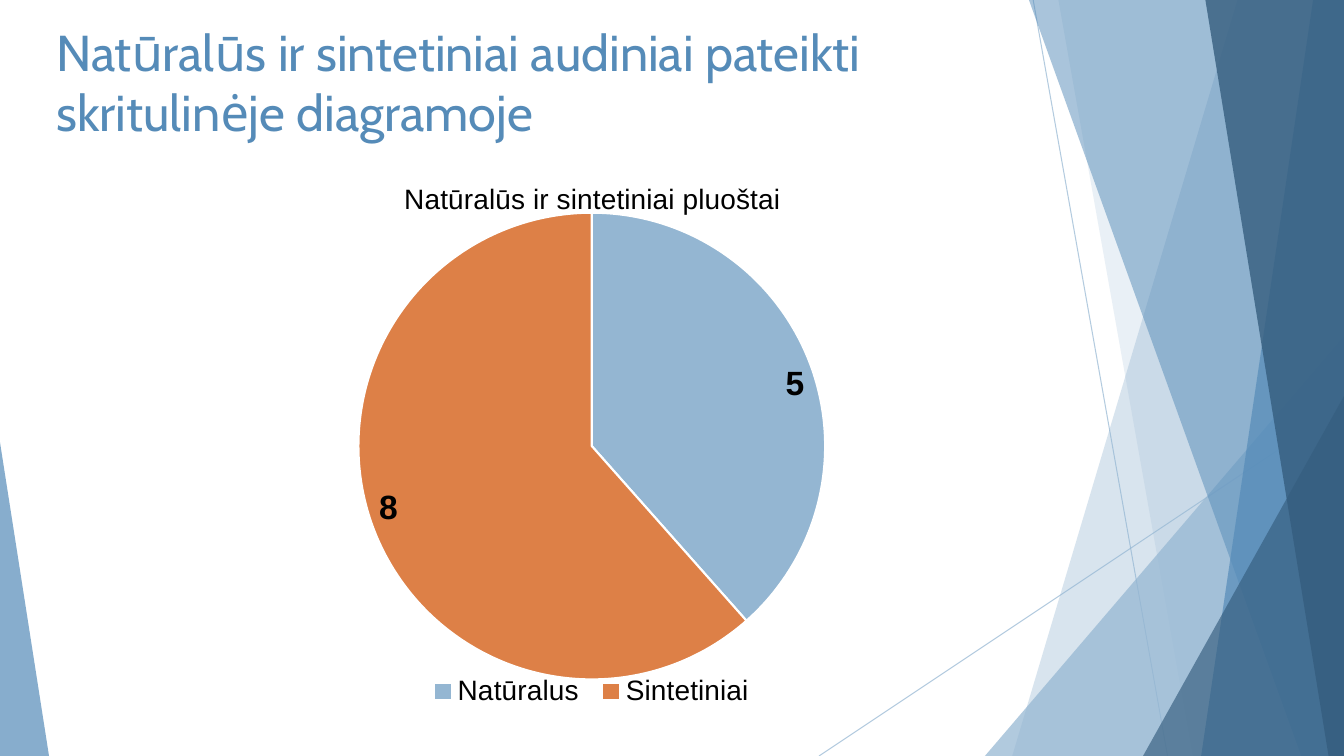
from lxml.etree import SubElement
from pptx import Presentation
from pptx.chart.data import CategoryChartData
from pptx.dml.color import RGBColor
from pptx.enum.chart import XL_CHART_TYPE, XL_LABEL_POSITION, XL_LEGEND_POSITION
from pptx.enum.shapes import MSO_CONNECTOR, MSO_SHAPE
from pptx.enum.text import MSO_ANCHOR, MSO_AUTO_SIZE, PP_ALIGN
from pptx.oxml import parse_xml
from pptx.oxml.ns import nsdecls, qn
from pptx.util import Pt

LIGHT = RGBColor(0x94, 0xB6, 0xD2)
BLUE = RGBColor(0x55, 0x8B, 0xB8)
NAVY = RGBColor(0x35, 0x5D, 0x7E)
ORANGE = RGBColor(0xDD, 0x80, 0x47)
BLACK = RGBColor(0, 0, 0)
WHITE = RGBColor(255, 255, 255)

W, H = 960, 540
TITLE = "Natūralūs ir sintetiniai audiniai pateikti skritulinėje diagramoje"
CHART_TITLE = "Natūralūs ir sintetiniai pluoštai"
FIBRES = [("Natūralus", 5, LIGHT), ("Sintetiniai", 8, ORANGE)]
TITLE_BOX = (33, 6.5, 677, 103.5)
CHART_BOX = (47, 100, 744, 433)

# Lines: x1, y1, x2, y2
LINES = [(738, 0, 834, H), (W, 290, 585, H)]
# Bands reach the right edge: x at top, x at bottom, colour, opacity
# Triangles: left, top, width, apex position, colour, opacity
DECOR = [
    ("band", 884, 723, LIGHT, 36),
    ("band", 756, 852, LIGHT, 20),
    ("triangle", 703.5, 240, 256.5, 1, LIGHT, 72),
    ("band", 735, 929.5, BLUE, 50),
    ("band", 938, 858, BLUE, 70),
    ("band", 861, 949, NAVY, 80),
    ("triangle", 816.5, 283, 143.5, 1, NAVY, 66),
    ("triangle", 0, 316, 35, 0, BLUE, 70),
]


def pts(*values):
    return [Pt(v) for v in values]


def set_opacity(sp, percent):
    for clr in sp._element.spPr.iter(qn("a:srgbClr")):
        SubElement(clr, qn("a:alpha"), val=str(percent * 1000))


def add_line(shapes, ends):
    line = shapes.add_connector(MSO_CONNECTOR.STRAIGHT, *pts(*ends))
    line.line.color.rgb = LIGHT
    line.line.width = Pt(0.75)
    set_opacity(line, 70)
    SubElement(line._element.spPr, qn("a:effectLst"))


def add_band(shapes, top_x, bottom_x):
    builder = shapes.build_freeform(Pt(top_x), 0, scale=1.0)
    builder.add_line_segments([pts(W, 0), pts(W, H), pts(bottom_x, H)], close=True)
    return builder.convert_to_shape()


def add_triangle(shapes, left, top, width, apex):
    sp = shapes.add_shape(MSO_SHAPE.ISOSCELES_TRIANGLE, *pts(left, top, width, H - top))
    sp.adjustments[0] = apex
    return sp


def set_layout(element, index, x, y, w=None, h=None):
    """Place a chart part by fractions of the chart's size."""
    for old in element.findall(qn("c:layout")):
        element.remove(old)
    layout = parse_xml(f"<c:layout {nsdecls('c')}><c:manualLayout/></c:layout>")
    manual = layout[0]
    if element.tag == qn("c:plotArea"):
        SubElement(manual, qn("c:layoutTarget"), val="inner")
    for name in ("xMode", "yMode"):
        SubElement(manual, qn(f"c:{name}"), val="edge")
    for name, value in zip("xywh", (x, y, w, h)):
        if value is not None:
            SubElement(manual, qn(f"c:{name}"), val=str(value))
    element.insert(index, layout)


def set_font(font, size, color=BLACK, name="Arial", bold=False):
    font.size, font.name, font.bold = Pt(size), name, bold
    font.color.rgb = color


def add_pie(shapes):
    data = CategoryChartData()
    data.categories = [name for name, _, _ in FIBRES]
    data.add_series("Series 1", [value for _, value, _ in FIBRES])
    chart = shapes.add_chart(XL_CHART_TYPE.PIE, *pts(*CHART_BOX), data).chart
    set_font(chart.font, 10, name="Cabin")

    chart.has_title = True
    title = chart.chart_title
    title.include_in_layout = False
    title.text_frame.text = CHART_TITLE
    set_font(title.text_frame.paragraphs[0].font, 20)
    set_layout(title._element, 1, 0.32, 0.06)

    chart.has_legend = True
    legend = chart.legend
    legend.position = XL_LEGEND_POSITION.BOTTOM
    legend.include_in_layout = False
    set_font(legend.font, 20)
    set_layout(legend._element, 1, 0.34, 0.87, 0.33, 0.08)

    plot = chart.plots[0]
    plot.vary_by_categories = True
    set_layout(plot._element.getparent(), 0, 0.28, 0.12, 0.45, 0.77)
    plot.has_data_labels = True
    labels = plot.data_labels
    labels.show_value = True
    labels.show_percentage = False
    labels.position = XL_LABEL_POSITION.INSIDE_END
    set_font(labels.font, 24, bold=True)
    for i, (_, _, color) in enumerate(FIBRES):
        fmt = plot.series[0].points[i].format
        fmt.fill.solid()
        fmt.fill.fore_color.rgb = color
        fmt.line.color.rgb = WHITE
        fmt.line.width = Pt(1.5)


def main():
    prs = Presentation()
    prs.slide_width, prs.slide_height = pts(W, H)
    s = prs.slides.add_slide(prs.slide_layouts[5])

    title = s.shapes.title
    title.left, title.top, title.width, title.height = pts(*TITLE_BOX)
    tf = title.text_frame
    tf.text = TITLE
    tf.word_wrap = True
    tf.auto_size = MSO_AUTO_SIZE.NONE
    tf.vertical_anchor = MSO_ANCHOR.MIDDLE
    p = tf.paragraphs[0]
    p.alignment = PP_ALIGN.LEFT
    set_font(p.font, 36, BLUE, "Cabin")

    for ends in LINES:
        add_line(s.shapes, ends)
    builders = {"band": add_band, "triangle": add_triangle}
    for kind, *place, color, opacity in DECOR:
        sp = builders[kind](s.shapes, *place)
        sp.shadow.inherit = False
        sp.fill.solid()
        sp.fill.fore_color.rgb = color
        set_opacity(sp, opacity)
        sp.line.fill.background()

    add_pie(s.shapes)
    prs.save("out.pptx")


if __name__ == "__main__":
    main()
